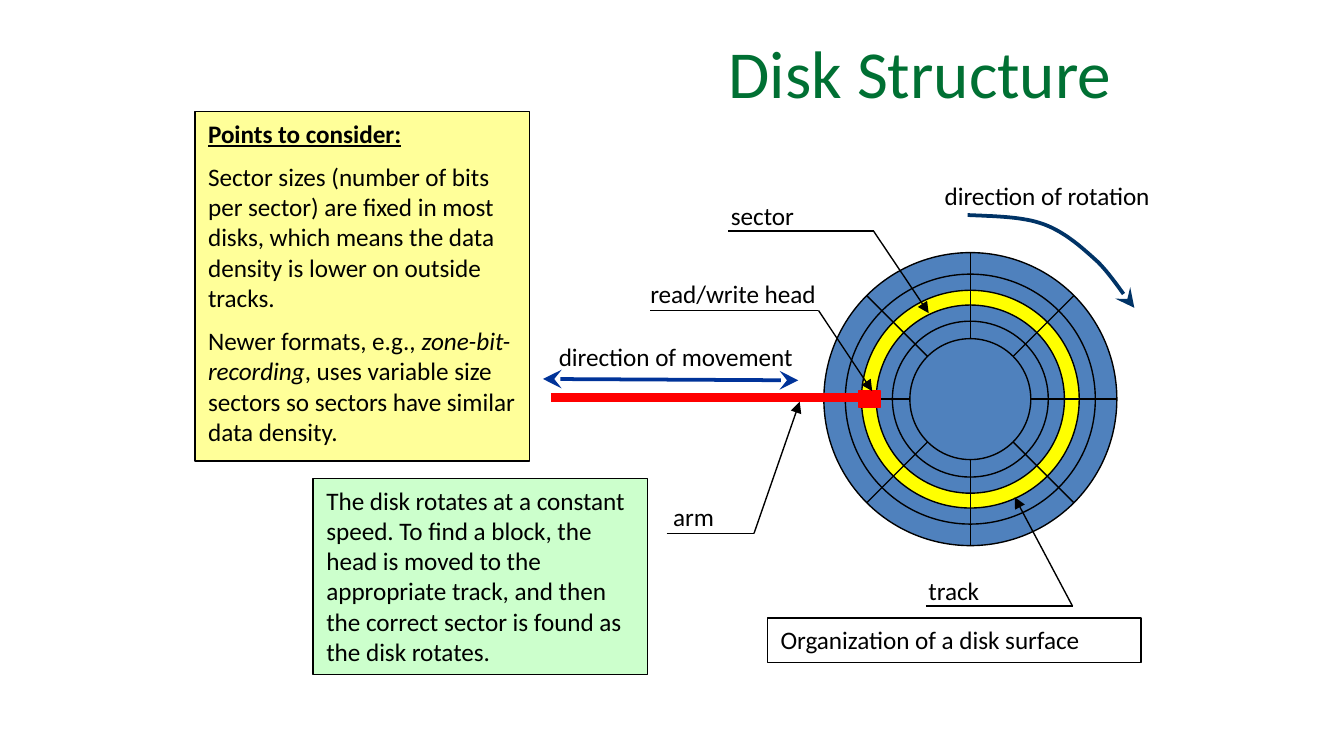
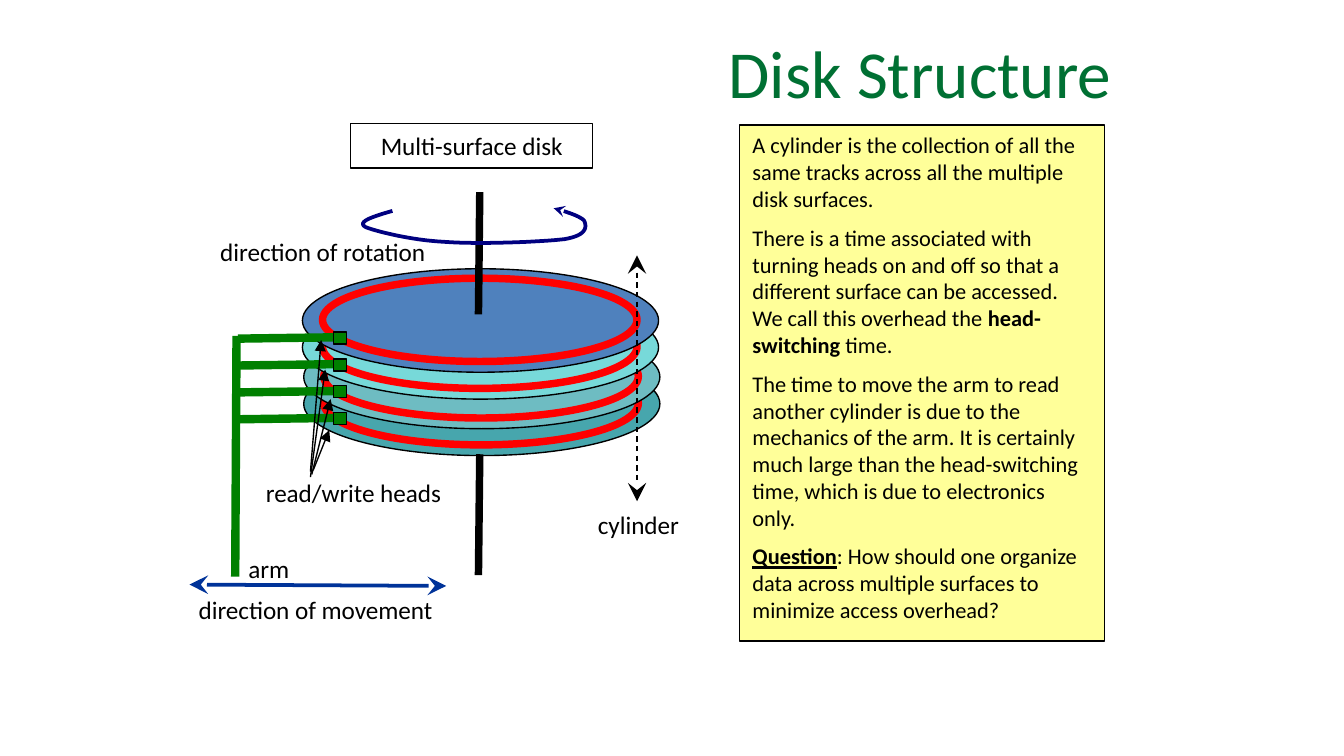
from dataclasses import dataclass
from math import cos, pi, sin

from lxml import etree
from pptx import Presentation
from pptx.dml.color import RGBColor
from pptx.enum.dml import MSO_LINE
from pptx.enum.shapes import MSO_CONNECTOR, MSO_SHAPE
from pptx.enum.text import MSO_ANCHOR, MSO_AUTO_SIZE, PP_ALIGN
from pptx.oxml.ns import qn
from pptx.util import Inches, Pt

STRAIGHT = MSO_CONNECTOR.STRAIGHT
OVAL, RECT = MSO_SHAPE.OVAL, MSO_SHAPE.RECTANGLE
DASH = MSO_LINE.DASH
LEFT, CENTER, RIGHT = PP_ALIGN.LEFT, PP_ALIGN.CENTER, PP_ALIGN.RIGHT
TOP, MIDDLE = MSO_ANCHOR.TOP, MSO_ANCHOR.MIDDLE
NO_FIT = MSO_AUTO_SIZE.NONE

FONT = "Calibri"
SIZE = 13.5
TITLE_ONLY = 5
COLORS = {
    "title": "007033", "black": "000000", "disk": "4F81BD",
    "disk2": "77D9D9", "disk3": "6EBCC2", "disk4": "47A6AD",
    "track": "FFFF00", "red": "FF0000", "green": "008000",
    "movement": "003399", "rotation": "003366", "spin": "000080",
    "note": "FFFF99", "tip": "CCFFCC",
}


def rgb(name):
    return RGBColor.from_string(COLORS[name])


def style_run(r, size, color="black", marks=""):
    r.font.name = FONT
    r.font.size = Pt(size)
    r.font.color.rgb = rgb(color)
    r.font.bold = "b" in marks
    r.font.italic = "i" in marks
    r.font.underline = "u" in marks


def style_line(line, color, width, arrows=(), head="triangle", head_size="med"):
    """Colour the line and put arrowheads on the ends named in arrows."""
    line.color.rgb = rgb(color)
    line.width = Pt(width)
    ln = line._get_or_add_ln()
    for end in arrows:
        etree.SubElement(ln, qn("a:" + end), type=head, w=head_size, len=head_size)


def bezier(start, curves, steps=16):
    """Return points along a chain of cubic curves (x1, y1, x2, y2, x3, y3)."""
    points = [start]
    for curve in curves:
        x0, y0 = points[-1]
        x1, y1, x2, y2, x3, y3 = curve
        for i in range(1, steps + 1):
            t = i / steps
            weights = (1 - t) ** 3, 3 * t * (1 - t) ** 2, 3 * t * t * (1 - t), t ** 3
            points.append((sum(w * x for w, x in zip(weights, (x0, x1, x2, x3))),
                           sum(w * y for w, y in zip(weights, (y0, y1, y2, y3)))))
    return points


@dataclass
class Region:
    """Part of a slide; places are in inches from its top left corner."""
    s: object
    x: float
    y: float

    def at(self, x, y):
        return Inches(self.x + x), Inches(self.y + y)

    def shape(self, kind, x, y, w, h, fill=None, line="black", width=0.75):
        sp = self.s.shapes.add_shape(kind, *self.at(x, y), Inches(w), Inches(h))
        sp.shadow.inherit = False
        if fill:
            sp.fill.solid()
            sp.fill.fore_color.rgb = rgb(fill)
        else:
            sp.fill.background()
        style_line(sp.line, line, width)
        return sp

    def line(self, start, end, color="black", width=0.75, dash=None, **arrow):
        c = self.s.shapes.add_connector(STRAIGHT, *self.at(*start), *self.at(*end))
        if dash:
            c.line.dash_style = dash
        style_line(c.line, color, width, **arrow)
        etree.SubElement(c._element.spPr, qn("a:effectLst"))

    def curve(self, start, curves, color, head_size):
        points = [self.at(*p) for p in bezier(start, curves)]
        builder = self.s.shapes.build_freeform(*points[0], scale=1.0)
        builder.add_line_segments(points[1:], close=False)
        sp = builder.convert_to_shape()
        sp.shadow.inherit = False
        sp.fill.background()
        style_line(sp.line, color, 2, ("tailEnd",), "stealth", head_size)

    def label(self, text, x, y, w):
        box = self.s.shapes.add_textbox(*self.at(x, y), Inches(w), Inches(0.33))
        tf = box.text_frame
        tf.text = text
        tf.word_wrap = False
        style_run(tf.paragraphs[0].runs[0], SIZE)

    def callout(self, text, label, start, elbow, tip):
        self.line(elbow, tip, arrows=("tailEnd",))
        self.line(start, elbow)
        self.label(text, *label)

    def movement(self, start, end, label):
        self.line(start, end, "movement", 2, arrows=("headEnd", "tailEnd"),
                  head="stealth", head_size="lg")
        self.label("direction of movement", *label, 1.97)


def text_panel(s, box, paragraphs, fill=None, size=SIZE, align=LEFT):
    """Framed text; each paragraph is a list of (text, marks) runs."""
    x, y, w, h = box
    tf = Region(s, x, y).shape(RECT, 0, 0, w, h, fill).text_frame
    tf.word_wrap = True
    tf.auto_size = NO_FIT
    tf.vertical_anchor = TOP
    for i, runs in enumerate(paragraphs):
        p = tf.add_paragraph() if i else tf.paragraphs[0]
        p.alignment = align
        if i:
            p.space_before = Pt(round(size * 0.52, 1))
        for text, marks in runs:
            r = p.add_run()
            r.text = text
            style_run(r, size, marks=marks)


def new_slide(prs):
    s = prs.slides.add_slide(prs.slide_layouts[TITLE_ONLY])
    title = s.shapes.title
    title.left, title.top = Inches(1.62), Inches(0.06)
    title.width, title.height = Inches(6.75), Inches(0.94)
    tf = title.text_frame
    tf.text = "Disk Structure"
    tf.vertical_anchor = MIDDLE
    p = tf.paragraphs[0]
    p.alignment = RIGHT
    style_run(p.runs[0], 36, "title")
    return s


def platter(region, cx, cy):
    """Rings of one disk surface, cut into eight columns of sectors."""
    outer, second, inner = 1.09, 0.93, 0.45
    rings = ((outer, "disk"), (0.81, "track"), (0.7, "disk"),
             (0.58, None), (inner, None), (second, None))
    for radius, fill in rings:
        region.shape(OVAL, cx - radius, cy - radius, 2 * radius, 2 * radius, fill)
    for near, far in ((second, outer), (inner, second)):
        for k in range(8):
            dx, dy = cos(k * pi / 4), sin(k * pi / 4)
            region.line((cx + near * dx, cy + near * dy), (cx + far * dx, cy + far * dy))


def surface_figure(s, x, y):
    region = Region(s, x, y)
    platter(region, 3.22, 1.77)

    # Arm with its head
    region.shape(RECT, 2.39, 1.71, 0.16, 0.12, "red", "red")
    region.line((0.1, 1.76), (2.41, 1.76), "red", 5)

    # Named parts: label, underline start, elbow, arrow tip
    region.callout("sector", (1.34, 0.24, 0.68), (1.42, 0.52), (2.5, 0.52), (2.91, 1.13))
    region.callout("track", (2.81, 3.03, 0.59), (2.89, 3.31), (3.98, 3.31), (3.55, 2.5))
    region.callout("read/write head", (0.74, 0.82, 1.45),
                   (0.84, 1.11), (2.09, 1.11), (2.49, 1.71))
    region.callout("arm", (0.91, 2.48, 0.51), (0.96, 2.77), (1.61, 2.77), (1.95, 1.79))

    # Directions
    region.curve((3.2, 0.4), ((3.4, 0.41, 3.61, 0.41, 3.77, 0.47),
                              (3.93, 0.53, 4.06, 0.65, 4.17, 0.75),
                              (4.28, 0.86, 4.39, 1.04, 4.44, 1.09)), "rotation", "lg")
    region.label("direction of rotation", 2.93, 0.09, 1.75)
    region.movement((0.04, 1.62), (1.94, 1.63), (0.06, 1.29))


def stack_figure(s, x, y):
    region = Region(s, x, y)

    # Disks from the bottom up, each with its track
    for dx, dy, fill in ((0.86, 1.22, "disk4"), (0.86, 1.02, "disk3"),
                         (0.85, 0.8, "disk2"), (0.85, 0.6, "disk")):
        region.shape(OVAL, dx, dy, 2.65, 0.77, fill)
        region.shape(OVAL, dx + 0.15, dy + 0.07, 2.34, 0.62, None, "red", 4)

    # Spindle and rotation
    for top, bottom in ((0.03, 0.94), (1.98, 2.88)):
        region.line((2.16, bottom), (2.17, top), width=4)
    region.curve((1.52, 0.17), ((1.38, 0.21, 1.25, 0.25, 1.32, 0.29),
                                (1.39, 0.32, 1.67, 0.39, 1.91, 0.4),
                                (2.16, 0.42, 2.63, 0.4, 2.8, 0.38),
                                (2.98, 0.35, 2.96, 0.28, 2.95, 0.25),
                                (2.94, 0.21, 2.76, 0.16, 2.72, 0.15)), "spin", "med")
    region.label("direction of rotation", 0.14, 0.31, 1.75)

    # Arm with four heads
    region.line((0.36, 1.1), (0.35, 2.89), "green", 4.5)
    for i in range(4):
        top = 1.07 + 0.2 * i
        region.line((1.08, top + 0.04), (0.37, top + 0.05), "green", 4.5)
        region.shape(RECT, 1.08, top, 0.1, 0.09, "green")
    region.label("arm", 0.35, 2.67, 0.51)
    region.movement((0.01, 2.95), (1.92, 2.96), (-0.02, 2.97))

    # Pointers to the heads
    for start, tip in (((0.93, 2.1), (1.05, 1.8)), ((0.92, 2.13), (1.06, 1.57)),
                       ((0.91, 2.15), (1.02, 1.35)), ((0.91, 2.11), (0.99, 1.13))):
        region.line(start, tip, arrows=("tailEnd",))
    region.label("read/write heads", 0.48, 2.1, 1.53)

    # Cylinder
    region.line((3.34, 0.5), (3.34, 2.33), dash=DASH, arrows=("headEnd", "tailEnd"),
                head="stealth", head_size="lg")
    region.label("cylinder", 2.95, 2.34, 0.82)


def surface_slide(prs):
    s = new_slide(prs)
    surface_figure(s, 4, 1.2)
    text_panel(s, (1.45, 0.83, 2.49, 2.6), [
        [("Points to consider:", "bu")],
        [("Sector sizes (number of bits per sector) are fixed in most disks, "
          "which means the data density is lower on outside tracks.", "")],
        [("Newer formats, e.g., ", ""), ("zone-bit-recording", "i"),
         (", uses variable size sectors so sectors have similar data density.", "")],
    ], "note")
    text_panel(s, (2.33, 3.56, 2.49, 1.46), [
        [("The disk rotates at a constant speed. To find a block, the head is moved to "
          "the appropriate track, and then the correct sector is found as the disk "
          "rotates.", "")]], "tip")
    text_panel(s, (5.71, 4.6, 2.78, 0.33), [[("Organization of a disk surface", "")]])


def stack_slide(prs):
    s = new_slide(prs)
    stack_figure(s, 1.4, 1.4)
    text_panel(s, (2.61, 0.92, 1.8, 0.33), [[("Multi-surface disk", "")]], align=CENTER)
    text_panel(s, (5.5, 0.93, 2.72, 3.84), [
        [("A cylinder is the collection of all the same tracks across all the multiple "
          "disk surfaces.", "")],
        [("There is a time associated with turning heads on and off so that a different "
          "surface can be accessed. We call this overhead the ", ""),
         ("head-switching", "b"), (" time.", "")],
        [("The time to move the arm to read another cylinder is due to the mechanics of "
          "the arm. It is certainly much large than the head-switching time, which is "
          "due to electronics only.", "")],
        [("Question", "bu"), (": How should one organize data across multiple surfaces "
                              "to minimize access overhead?", "")],
    ], "note", 12)


def main():
    prs = Presentation()
    prs.slide_width, prs.slide_height = Inches(10), Inches(10 * 9 / 16)
    surface_slide(prs)
    stack_slide(prs)
    prs.save("out.pptx")


if __name__ == "__main__":
    main()
